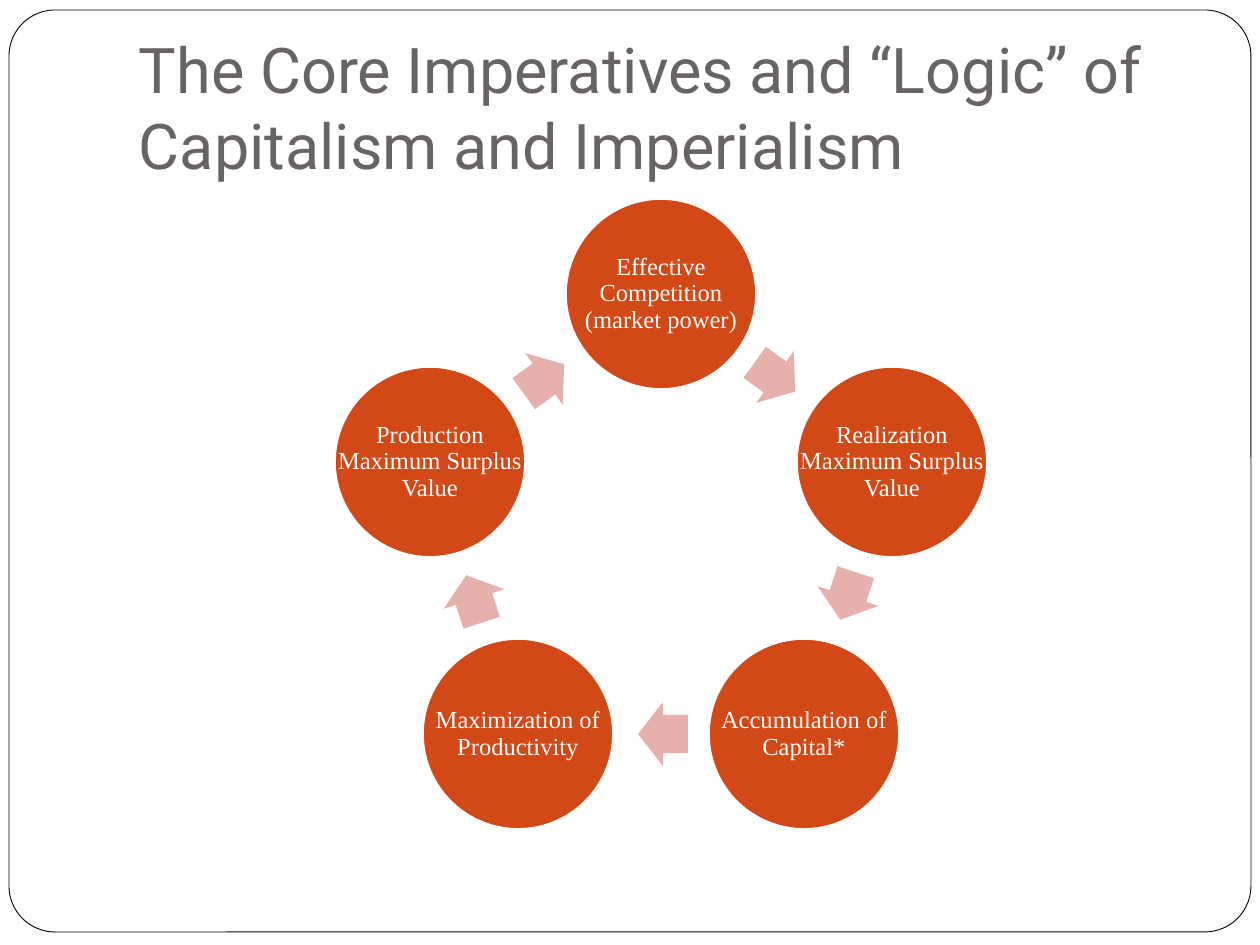
import math
from dataclasses import dataclass

import pptx
import pptx.dml.color
import pptx.enum.shapes
import pptx.enum.text
import pptx.util

PX = 914400 // 126  # EMU in one px
SHAPE = pptx.enum.shapes.MSO_SHAPE
ANCHOR = pptx.enum.text.MSO_ANCHOR
ALIGN = pptx.enum.text.PP_ALIGN

# Ring geometry, in px
CENTER_X, CENTER_Y, RING_RADIUS = 661, 537, 243
DISC = 190
ARROW_WIDTH, ARROW_HEIGHT = 50, 64
ARROW_SETBACK = 1.5  # arrows sit just short of the midpoint between discs

STAGES = (
    "Effective Competition (market power)",
    "Realization Maximum Surplus Value",
    "Accumulation of Capital*",
    "Maximization of Productivity",
    "Production Maximum Surplus Value",
)


@dataclass(frozen=True)
class Box:
    left: int
    top: int
    width: int
    height: int

    def emu(self) -> tuple[int, ...]:
        return tuple(n * PX for n in (self.left, self.top, self.width, self.height))


@dataclass(frozen=True)
class TextStyle:
    font: dict
    paragraph: dict
    anchor: ANCHOR
    insets: tuple[int, int, int, int]  # left, top, right, bottom
    color: str


TITLE_STYLE = TextStyle(
    {"name": "Roboto", "size": pptx.util.Pt(36)},
    {"alignment": ALIGN.LEFT},
    ANCHOR.BOTTOM, (13, 6, 13, 13), "696464",
)
STAGE_STYLE = TextStyle(
    {"name": "Times New Roman", "size": pptx.util.Pt(14)},
    {"alignment": ALIGN.CENTER, "line_spacing": 0.9, "space_after": pptx.util.Pt(5)},
    ANCHOR.MIDDLE, (2, 2, 2, 2), "FFFFFF",
)


def rgb(value: str) -> pptx.dml.color.RGBColor:
    return pptx.dml.color.RGBColor.from_string(value)


def set_all(target, values: dict) -> None:
    for name, value in values.items():
        setattr(target, name, value)


def centered(x: float, y: float, width: int, height: int) -> Box:
    return Box(round(x - width / 2), round(y - height / 2), width, height)


def add_shape(slide, kind, box: Box, fill: str, line: str = "", line_pt: float = 0,
              adjustments: tuple = (), rotation: float = 0) -> None:
    shape = slide.shapes.add_shape(kind, *box.emu())
    shape.shadow.inherit = False
    shape.rotation = rotation
    for i, value in enumerate(adjustments):
        shape.adjustments[i] = value
    shape.fill.solid()
    shape.fill.fore_color.rgb = rgb(fill)
    if line:
        shape.line.color.rgb = rgb(line)
        shape.line.width = pptx.util.Pt(line_pt)
    else:
        shape.line.fill.background()


def add_text(slide, box: Box, text: str, style: TextStyle) -> None:
    frame = slide.shapes.add_textbox(*box.emu()).text_frame
    sides = ("margin_left", "margin_top", "margin_right", "margin_bottom")
    set_all(frame, {side: n * PX for side, n in zip(sides, style.insets)})
    set_all(frame, {"word_wrap": True, "vertical_anchor": style.anchor})
    paragraph = frame.paragraphs[0]
    set_all(paragraph, style.paragraph)
    run = paragraph.add_run()
    run.text = text
    set_all(run.font, style.font)
    run.font.color.rgb = rgb(style.color)


def add_cycle(slide) -> None:
    step = 360 / len(STAGES)
    arrow_radius = RING_RADIUS * math.cos(math.radians(step / 2))
    for i, stage in enumerate(STAGES):
        # Disc and its label, clockwise from the top
        angle = math.radians(i * step)
        disc = centered(CENTER_X + RING_RADIUS * math.sin(angle),
                        CENTER_Y - RING_RADIUS * math.cos(angle), DISC, DISC)
        add_shape(slide, SHAPE.OVAL, disc, "D34817", "FFFFFF", 1)
        add_text(slide, disc, stage, STAGE_STYLE)

        # Arrow to the next disc, turned along the ring
        turn = (i + 0.5) * step
        sin, cos = math.sin(math.radians(turn)), math.cos(math.radians(turn))
        arrow = centered(CENTER_X + arrow_radius * sin - ARROW_SETBACK * cos,
                         CENTER_Y - arrow_radius * cos - ARROW_SETBACK * sin,
                         ARROW_WIDTH, ARROW_HEIGHT)
        add_shape(slide, SHAPE.RIGHT_ARROW, arrow, "E6B1AC",
                  adjustments=(0.6, 0.5), rotation=turn)


def main() -> None:
    deck = pptx.Presentation()
    deck.slide_width, deck.slide_height = 1260 * PX, 945 * PX
    slide = deck.slides.add_slide(deck.slide_layouts[6])

    # Rounded page frame
    add_shape(slide, SHAPE.ROUNDED_RECTANGLE, Box(9, 10, 1242, 922),
              "FFFFFF", "000000", 0.5, adjustments=(0.05,))
    # Title
    add_text(slide, Box(126, 38, 1071, 157),
             "The Core Imperatives and “Logic” of Capitalism and Imperialism", TITLE_STYLE)
    # Cycle of stages
    add_cycle(slide)

    deck.save("out.pptx")


if __name__ == "__main__":
    main()
